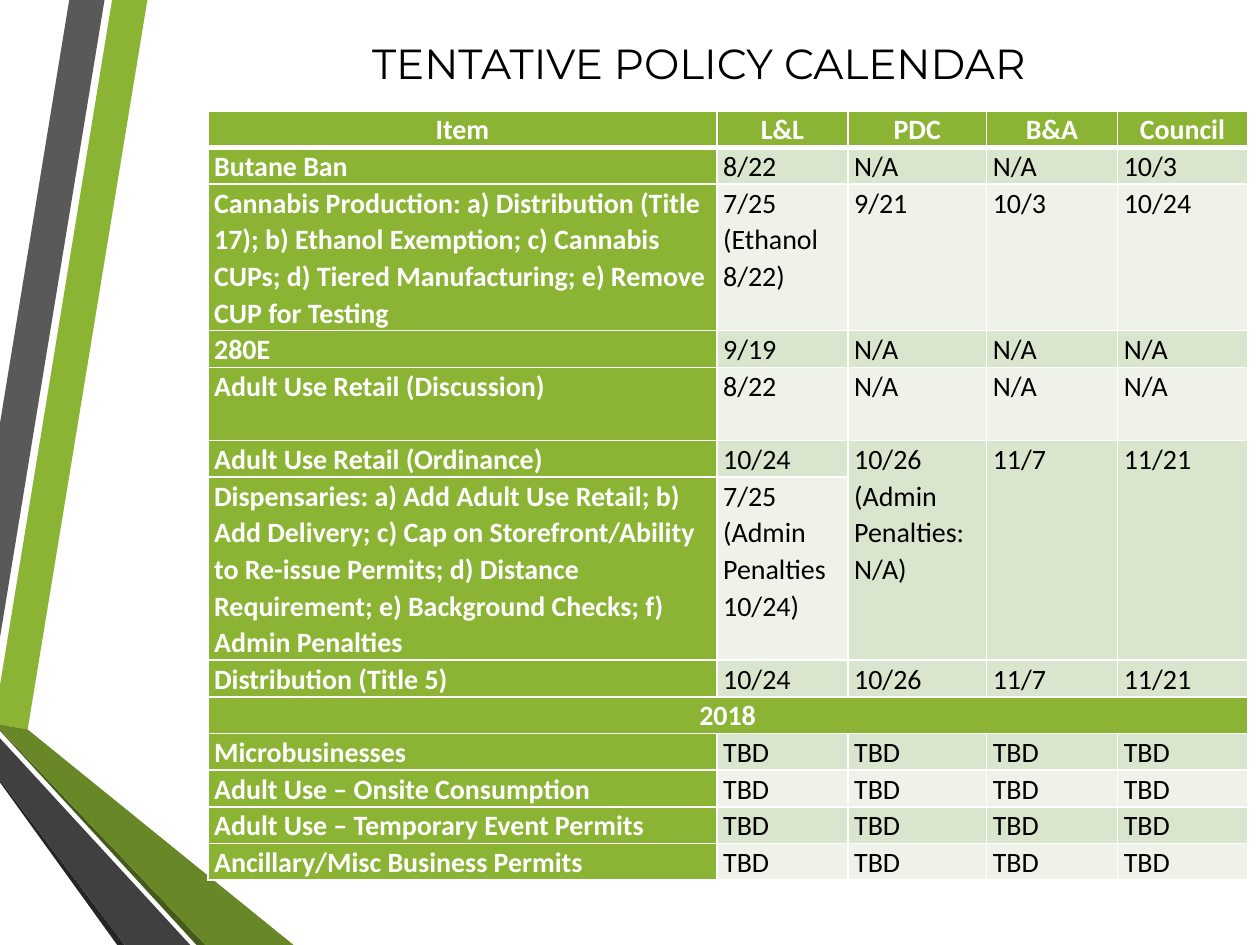
"""Builds the policy calendar slide; lengths are percentages of the slide's size."""
import dataclasses
import typing

import lxml.etree
import pptx
import pptx.dml.color
import pptx.enum.text
import pptx.oxml.ns
import pptx.util

Point = tuple[float, float]
ALIGN = pptx.enum.text.PP_ALIGN


@dataclasses.dataclass(frozen=True)
class Theme:
    green: str = "8BB434"
    olive: str = "688727"
    moss: str = "465A1A"
    gray: str = "595959"
    slate: str = "404040"
    coal: str = "262626"
    tint: str = "DAE5CE"
    pale: str = "EEF2E8"
    white: str = "FFFFFF"
    black: str = "000000"
    body: str = "Calibri"
    head: str = "Montserrat"
    small: int = 16
    large: int = 24


class Band(typing.NamedTuple):
    color: str
    points: tuple[Point, ...]


class Row(typing.NamedTuple):
    lines: int
    item: str
    dates: tuple[str, ...] = ()


THEME = Theme()
WIDE = pptx.util.Inches(10)
HIGH = pptx.util.Inches(7.5)
LINE = 3.87
COLS = (40.4, 10.4, 11, 10.4, 10.3)
OPEN = ("TBD",) * 4

BANDS = (
    Band(THEME.green, ((0, 72.53), (0, 76.67), (2.2, 77.2), (11.7, 0), (8.9, 0))),
    Band(THEME.gray, ((8.3, 0), (5.5, 0), (0, 44.8), (0, 67.47))),
    Band(THEME.coal, ((0, 82.53), (0, 82.8), (9.3, 100), (9.9, 100))),
    Band(THEME.moss, ((0, 77.2), (0, 77.33), (15.6, 100), (16.3, 100))),
    Band(THEME.olive, ((0, 77.2), (16.3, 100), (23.3, 100), (2.2, 77.2), (0, 76.67))),
    Band(THEME.slate, ((0, 82.53), (9.9, 100), (15.1, 100), (0, 78.13))),
)

ROWS = (
    Row(1, "Item", ("L&L", "PDC", "B&A", "Council")),
    Row(1, "Butane Ban", ("8/22", "N/A", "N/A", "10/3")),
    Row(4, "Cannabis Production: a) Distribution (Title 17); b) Ethanol Exemption; "
        "c) Cannabis CUPs; d) Tiered Manufacturing; e) Remove CUP for Testing",
        ("7/25\n(Ethanol 8/22)", "9/21", "10/3", "10/24")),
    Row(1, "280E", ("9/19", "N/A", "N/A", "N/A")),
    Row(2, "Adult Use Retail (Discussion)", ("8/22", "N/A", "N/A", "N/A")),
    Row(1, "Adult Use Retail (Ordinance)",
        ("10/24", "10/26\n(Admin\nPenalties: N/A)", "11/7", "11/21")),
    Row(5, "Dispensaries: a) Add Adult Use Retail; b) Add Delivery; c) Cap on "
        "Storefront/Ability to Re-issue Permits; d) Distance Requirement; "
        "e) Background Checks; f) Admin Penalties",
        ("7/25\n(Admin Penalties 10/24)",)),
    Row(1, "Distribution (Title 5)", ("10/24", "10/26", "11/7", "11/21")),
    Row(1, "2018"),
    Row(1, "Microbusinesses", OPEN),
    Row(1, "Adult Use – Onsite Consumption", OPEN),
    Row(1, "Adult Use – Temporary Event Permits", OPEN),
    Row(1, "Ancillary/Misc Business Permits", OPEN),
)
SHARED = 5
YEAR = 8


def across(share: float) -> int:
    return round(WIDE * share / 100)


def down(share: float) -> int:
    return round(HIGH * share / 100)


def tone(color: str) -> pptx.dml.color.RGBColor:
    return pptx.dml.color.RGBColor.from_string(color)


def write(frame, text: str, *, font: str = THEME.body, size: int = THEME.small,
          color: str = THEME.black, bold: bool = False, align=ALIGN.LEFT,
          space: float = 1.0) -> None:
    frame.word_wrap = True
    for index, line in enumerate(text.split("\n")):
        para = frame.add_paragraph() if index else frame.paragraphs[0]
        para.alignment, para.line_spacing = align, space
        run = para.add_run()
        run.text = line
        run.font.name, run.font.size = font, pptx.util.Pt(size)
        run.font.bold, run.font.color.rgb = bold, tone(color)


def draw_band(slide, band: Band) -> None:
    first, *rest = [(across(x), down(y)) for x, y in band.points]
    pen = slide.shapes.build_freeform(*first)
    pen.add_line_segments(rest, close=True)
    shape = pen.convert_to_shape()
    shape.shadow.inherit = False
    shape.fill.solid()
    shape.fill.fore_color.rgb = tone(band.color)
    shape.line.fill.background()


def edge(cell, top: int, base: int) -> None:
    props = cell._tc.get_or_add_tcPr()
    name = pptx.oxml.ns.qn
    for side, width in (("L", 1), ("R", 1), ("T", top), ("B", base)):
        line = lxml.etree.SubElement(props, name(f"a:ln{side}"), w=str(pptx.util.Pt(width)))
        fill = lxml.etree.SubElement(line, name("a:solidFill"))
        lxml.etree.SubElement(fill, name("a:srgbClr"), val=THEME.white)


def style(cell, row: int, solid: bool) -> None:
    edge(cell, 3 if row == 1 else 1, 1 if row else 3)
    cell.margin_left = cell.margin_right = pptx.util.Inches(0.05)
    cell.margin_top = cell.margin_bottom = 0
    cell.fill.solid()
    cell.fill.fore_color.rgb = tone(
        THEME.green if solid else THEME.tint if row % 2 else THEME.pale)


def draw_table(slide) -> None:
    total = sum(row.lines for row in ROWS)
    table = slide.shapes.add_table(len(ROWS), len(COLS), across(16.5), down(11.73),
                                   across(sum(COLS)), down(total * LINE)).table
    table.horz_banding = False
    for column, share in zip(table.columns, COLS):
        column.width = across(share)
    for r, row in enumerate(ROWS):
        table.rows[r].height = down(row.lines * LINE)
        texts = (row.item, *row.dates)
        for c in range(len(COLS)):
            cell = table.cell(r, c)
            solid = c == 0 or r in (0, YEAR)
            style(cell, r, solid)
            if c < len(texts):
                write(cell.text_frame, texts[c], bold=solid, space=1.07,
                      color=THEME.white if solid else THEME.black,
                      align=ALIGN.CENTER if r in (0, YEAR) else ALIGN.LEFT)
    for c in range(2, len(COLS)):
        table.cell(SHARED, c).merge(table.cell(SHARED + 1, c))
    table.cell(YEAR, 0).merge(table.cell(YEAR, len(COLS) - 1))


def draw_title(slide) -> None:
    box = slide.shapes.add_textbox(across(15.5), down(3.33), across(79.9), down(6.67))
    write(box.text_frame, "TENTATIVE POLICY CALENDAR", font=THEME.head,
          size=THEME.large, align=ALIGN.CENTER)
    box.text_frame.auto_size = pptx.enum.text.MSO_AUTO_SIZE.SHAPE_TO_FIT_TEXT


def main() -> None:
    deck = pptx.Presentation()
    deck.slide_width, deck.slide_height = WIDE, HIGH
    slide = deck.slides.add_slide(deck.slide_layouts[6])
    for band in BANDS:
        draw_band(slide, band)
    draw_table(slide)
    draw_title(slide)
    deck.save("out.pptx")


if __name__ == "__main__":
    main()
